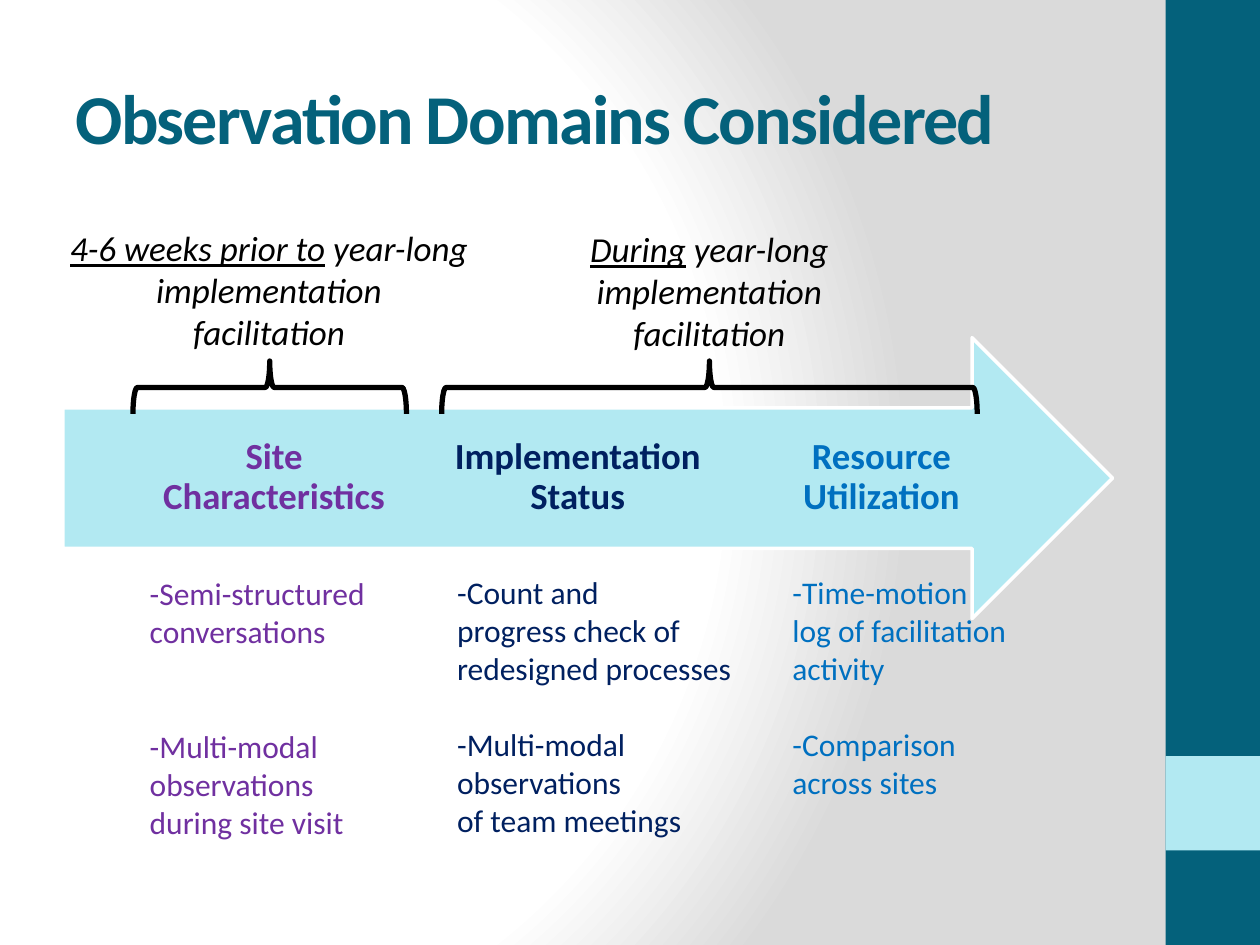
import dataclasses
import typing

import lxml.etree
import pptx
import pptx.dml.color
import pptx.enum.shapes
import pptx.enum.text
import pptx.oxml.ns
import pptx.util

Inches = pptx.util.Inches
Pt = pptx.util.Pt
Shape = pptx.enum.shapes.MSO_SHAPE
Align = pptx.enum.text.PP_ALIGN
Anchor = pptx.enum.text.MSO_ANCHOR


@dataclasses.dataclass(frozen=True)
class Theme:
    font: str = "Calibri"
    teal: str = "04617B"
    aqua: str = "B2E9F2"
    white: str = "FFFFFF"
    grey: str = "DADADA"
    black: str = "000000"
    purple: str = "7030A0"
    navy: str = "002060"
    blue: str = "0070C0"
    title: int = 40
    head: int = 21
    phase: int = 20
    body: int = 18


THEME = Theme()
Box = tuple[float, float, float, float]


@dataclasses.dataclass(frozen=True)
class Phase:
    lead: str
    box: Box
    brace: Box


@dataclasses.dataclass(frozen=True)
class Domain:
    head: str
    color: str
    box: Box
    notes: tuple[tuple[str, ...], ...]
    gap: int  # blank lines between notes


PHASES = (
    Phase("4-6 weeks prior to", (0.43, 1.75, 3.41, 1.11), (1.93, 1.99, 0.42, 2.17)),
    Phase("During", (4.58, 1.76, 2.1, 1.11), (5.42, 0.95, 0.42, 4.25)),
)
DOMAINS = (
    Domain("Site Characteristics", THEME.purple, (1.09, 4.51, 1.93, 2.22),
           (("-Semi-structured", "conversations"),
            ("-Multi-modal", "observations", "during site visit")), 2),
    Domain("Implementation Status", THEME.navy, (3.53, 4.5, 2.4, 2.22),
           (("-Count and", "progress check of", "redesigned processes"),
            ("-Multi-modal", "observations", "of team meetings")), 1),
    Domain("Resource Utilization", THEME.blue, (6.19, 4.5, 1.92, 2.22),
           (("-Time-motion", "log of facilitation", "activity"),
            ("-Comparison", "across sites")), 1),
)


def rgb(color: str) -> pptx.dml.color.RGBColor:
    return pptx.dml.color.RGBColor.from_string(color)


def apply(target: typing.Any, **values: typing.Any) -> None:
    for name, value in values.items():
        setattr(target, name, value)


def place(box: Box) -> list[int]:
    return [Inches(side) for side in box]


def add_run(para, text: str, size: int, color: str, **style):
    run = para.add_run()
    run.text = text
    apply(run.font, name=THEME.font, size=Pt(size), **style)
    run.font.color.rgb = rgb(color)
    return run


def add_text(slide, box: Box, **frame):
    text = slide.shapes.add_textbox(*place(box)).text_frame
    apply(text, **frame)
    return text


def next_para(text, first: bool):
    return text.paragraphs[0] if first else text.add_paragraph()


def add_shape(slide, kind, box: Box, fill: str = "", line: str = "", width: float = 0):
    shape = slide.shapes.add_shape(kind, *place(box))
    shape.shadow.inherit = False
    if fill:
        shape.fill.solid()
        shape.fill.fore_color.rgb = rgb(fill)
    else:
        shape.fill.background()
    if line:
        shape.line.color.rgb = rgb(line)
        shape.line.width = Pt(width)
    else:
        shape.line.fill.background()
    return shape


def paint_back(slide) -> None:
    """Fill the slide with a round gradient, which needs XML."""
    slide.background.fill.solid()
    node = slide.element.find(".//" + pptx.oxml.ns.qn("p:bgPr"))
    stops = "".join(
        f'<a:gs pos="{spot * 1000}"><a:srgbClr val="{color}"/></a:gs>'
        for spot, color in ((0, THEME.white), (75, THEME.white), (100, THEME.grey)))
    node.replace(node[0], lxml.etree.fromstring(
        f'<a:gradFill {pptx.oxml.ns.nsdecls("a")} rotWithShape="1">'
        f'<a:gsLst>{stops}</a:gsLst><a:path path="circle">'
        '<a:fillToRect l="20000" t="50000" r="100000" b="50000"/>'
        '</a:path></a:gradFill>'))


def add_title(slide, words: str) -> None:
    title = slide.shapes.title
    sides = place((0.5, 0.3, 8.33, 1.25))
    apply(title, **dict(zip(("left", "top", "width", "height"), sides)))
    title.text_frame.vertical_anchor = Anchor.MIDDLE
    para = title.text_frame.paragraphs[0]
    para.alignment = Align.LEFT
    run = add_run(para, words, THEME.title, THEME.teal, bold=True)
    run.font._element.set("spc", "-100")


def add_phase(slide, phase: Phase) -> None:
    brace = add_shape(slide, Shape.LEFT_BRACE, phase.brace, line=THEME.black, width=3)
    brace.rotation = 90
    text = add_text(slide, phase.box, word_wrap=False)
    for row, words in enumerate((" year-long", "implementation", "facilitation")):
        para = next_para(text, row == 0)
        para.alignment = Align.CENTER
        style = dict(size=THEME.phase, color=THEME.black, italic=True)
        if row == 0:
            add_run(para, phase.lead, underline=True, **style)
        add_run(para, words, **style)


def add_domain(slide, domain: Domain, left: float) -> None:
    text = add_text(slide, (left, 3.23, 2.01, 1.12), word_wrap=True,
                    vertical_anchor=Anchor.MIDDLE, margin_left=0, margin_right=0,
                    margin_top=Inches(0.23), margin_bottom=Inches(0.23))
    para = text.paragraphs[0]
    apply(para, alignment=Align.CENTER, line_spacing=0.9)
    add_run(para, domain.head, THEME.head, domain.color, bold=True)

    text = add_text(slide, domain.box, word_wrap=False)
    for part, note in enumerate(domain.notes):
        for row, words in enumerate(note):
            para = next_para(text, part + row == 0)
            if part and row == 0:
                para.space_before = Pt(22 * domain.gap)
            add_run(para, words, THEME.body, domain.color)


def main() -> None:
    deck = pptx.Presentation()
    apply(deck, slide_width=Inches(10), slide_height=Inches(7.5))
    slide = deck.slides.add_slide(deck.slide_layouts[5])
    paint_back(slide)
    add_shape(slide, Shape.RECTANGLE, (9.25, 0, 0.75, 7.5), THEME.teal)
    add_shape(slide, Shape.RECTANGLE, (9.25, 6, 0.75, 0.75), THEME.aqua)
    add_title(slide, "Observation Domains Considered")
    add_shape(slide, Shape.RIGHT_ARROW, (0.5, 2.68, 8.33, 2.23),
              THEME.aqua, THEME.white, 2)
    for phase in PHASES:
        add_phase(slide, phase)
    for spot, domain in enumerate(DOMAINS):
        add_domain(slide, domain, 1.17 + 2.41 * spot)
    deck.save("out.pptx")


if __name__ == "__main__":
    main()
